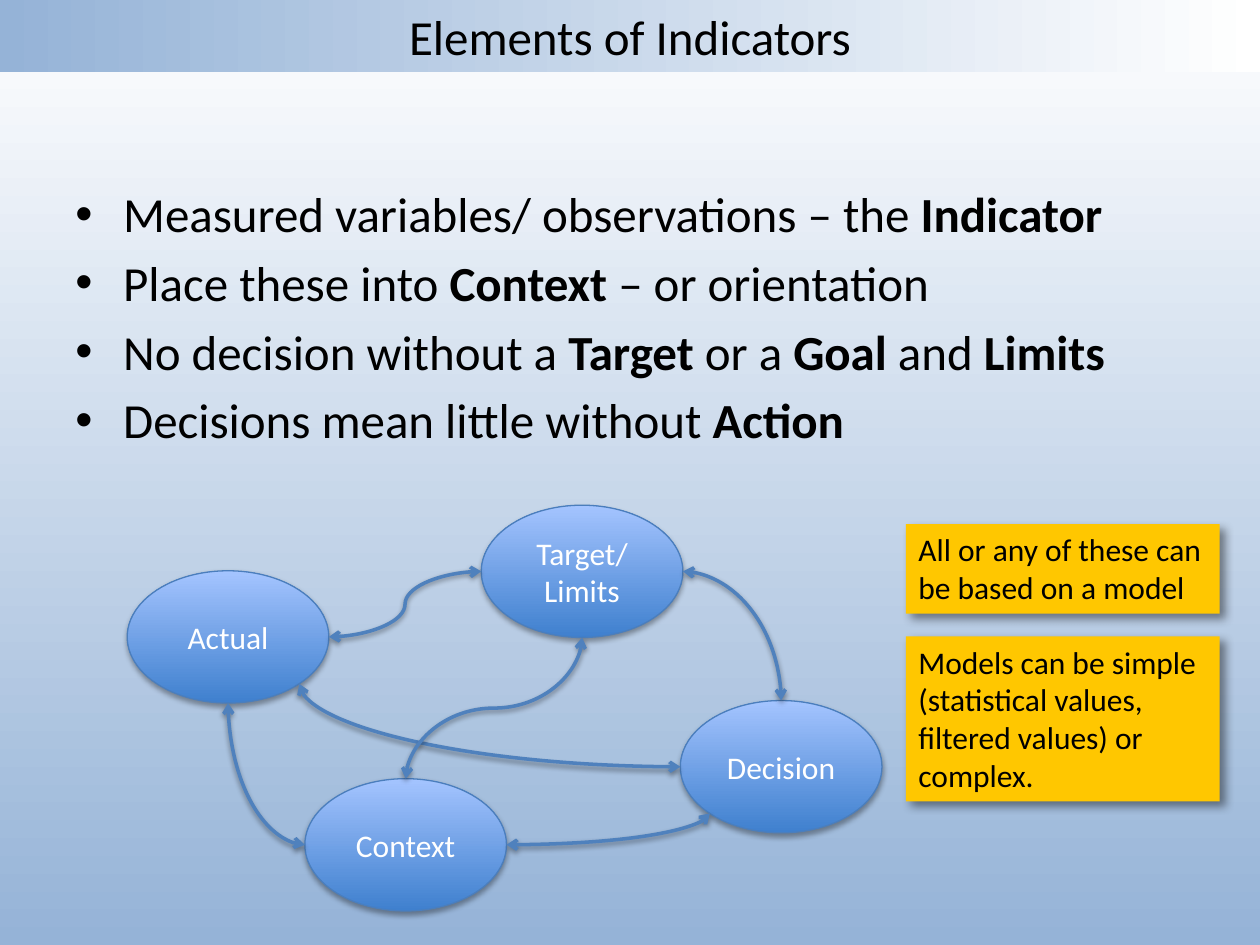
"""Build the Elements of Indicators slide with its linked decision loop."""
from dataclasses import dataclass
from math import cos, radians, sin

from pptx import Presentation
from pptx.dml.color import RGBColor as Rgb
from pptx.enum.shapes import MSO_CONNECTOR as Link, MSO_SHAPE as Form
from pptx.enum.text import MSO_ANCHOR as Anchor, MSO_AUTO_SIZE as Auto, PP_ALIGN as Align
from pptx.oxml import parse_xml
from pptx.oxml.ns import qn
from pptx.util import Inches as Inch, Pt

TITLE = "Elements of Indicators"
POINTS = [
    "Measured variables/ observations – the *Indicator*",
    "Place these into *Context* – or orientation",
    "No decision without a *Target *or a *Goal *and* Limits*",
    "Decisions mean little without *Action*",
]
NODES = {
    "Actual": (1.01, 4.53),
    "Context": (2.42, 6.18),
    "Target/ Limits": (3.82, 4.01),
    "Decision": (5.4, 5.56),
}
TOP, LEFT, LOW_LEFT, LOW, LOW_RIGHT, RIGHT = 0, 2, 3, 4, 5, 6
LINKS = [
    ("Actual", RIGHT, "Target/ Limits", LEFT),
    ("Actual", LOW, "Context", LEFT),
    ("Actual", LOW_RIGHT, "Decision", LEFT),
    ("Target/ Limits", LOW, "Context", TOP),
    ("Decision", TOP, "Target/ Limits", RIGHT),
    ("Context", RIGHT, "Decision", LOW_LEFT),
]
NOTES = [
    ("All or any of these can be based on a model", 4.16, 0.71),
    ("Models can be simple (statistical values, filtered values) or complex.", 5.05, 1.31),
]
WIDE, HIGH = 10, 7.5
NODE_W, NODE_H = 1.6, 1.05
NOTE_X, NOTE_W = 7.19, 2.49
DRAWING = "http://schemas.openxmlformats.org/drawingml/2006/main"


@dataclass(frozen=True)
class Theme:
    font: str = "Calibri"
    big: int = 28
    small: int = 18
    ink: str = "000000"
    white: str = "FFFFFF"
    sky: str = "95B3D7"
    deep: str = "3F80CE"
    pale: str = "A4C4FF"
    rim: str = "4B7EBC"
    wire: str = "4F81BD"
    gold: str = "FFC700"
    node_shade: tuple = (35, 3.1, 1.8, 90)
    wire_shade: tuple = (38, 3.1, 1.6, 90)
    note_shade: tuple = (43, 5.5, 4, 45)


LOOK = Theme()


def tint(name):
    return Rgb.from_string(name)


def blend(fill, first, last, angle):
    fill.gradient()
    fill.gradient_angle = -angle % 360
    for stop, name in zip(fill.gradient_stops, (first, last)):
        stop.color.rgb = tint(name)


def shade(shape, alpha, blur, gap, angle):
    shape._element.spPr.append(parse_xml(
        f'<a:effectLst xmlns:a="{DRAWING}"><a:outerShdw blurRad="{Pt(blur)}" '
        f'dist="{Pt(gap)}" dir="{angle * 60000}" rotWithShape="0">'
        f'<a:srgbClr val="{LOOK.ink}"><a:alpha val="{alpha * 1000}"/></a:srgbClr>'
        f'</a:outerShdw></a:effectLst>'))


def write(par, text, size, color):
    for i, part in enumerate(text.split("*")):
        if part:
            run = par.add_run()
            run.text = part
            run.font.name, run.font.size = LOOK.font, Pt(size)
            run.font.bold = i % 2 == 1
            run.font.color.rgb = tint(color)


def add_title(slide):
    title = slide.shapes.title
    title.left, title.top, title.width, title.height = 0, 0, Inch(WIDE), Inch(0.57)
    blend(title.fill, LOOK.sky, LOOK.white, 0)
    title.text_frame.vertical_anchor = Anchor.MIDDLE
    par = title.text_frame.paragraphs[0]
    par.alignment = Align.CENTER
    write(par, TITLE, LOOK.big, LOOK.ink)


def add_points(slide):
    frame = slide.shapes.add_textbox(Inch(0.5), Inch(1.41), Inch(9), Inch(5.29)).text_frame
    frame.word_wrap = True
    for i, text in enumerate(POINTS):
        par = frame.add_paragraph() if i else frame.paragraphs[0]
        par.space_before = Pt(LOOK.big * 0.2)
        props = par._p.get_or_add_pPr()
        props.set("marL", str(Inch(0.38)))
        props.set("indent", str(Inch(-0.38)))
        props.append(parse_xml(f'<a:buFont xmlns:a="{DRAWING}" typeface="Arial"/>'))
        props.append(parse_xml(f'<a:buChar xmlns:a="{DRAWING}" char="•"/>'))
        write(par, text, LOOK.big, LOOK.ink)


def add_node(slide, name, x, y):
    node = slide.shapes.add_shape(Form.OVAL, Inch(x), Inch(y), Inch(NODE_W), Inch(NODE_H))
    blend(node.fill, LOOK.deep, LOOK.pale, 270)
    node.line.color.rgb, node.line.width = tint(LOOK.rim), Pt(0.75)
    shade(node, *LOOK.node_shade)
    frame = node.text_frame
    frame.word_wrap, frame.vertical_anchor = True, Anchor.MIDDLE
    frame.paragraphs[0].alignment = Align.CENTER
    write(frame.paragraphs[0], name, LOOK.small, LOOK.white)
    return node


def site_at(name, site):
    x, y = NODES[name]
    turn = radians(90 + 45 * site)
    return x + NODE_W / 2 * (1 + cos(turn)), y + NODE_H / 2 * (1 - sin(turn))


def add_link(slide, nodes, start, out, end, into):
    (x1, y1), (x2, y2) = site_at(start, out), site_at(end, into)
    dx, dy = x2 - x1, y2 - y1
    wide, high, turn, flip = abs(dx), abs(dy), 0, dy < 0
    if out not in (LEFT, RIGHT):
        wide, high = high, wide
        turn, flip = (90, dx > 0) if dy > 0 else (270, dx < 0)
    x, y = (x1 + x2 - wide) / 2, (y1 + y2 - high) / 2
    link = slide.shapes.add_connector(
        Link.CURVE, Inch(x), Inch(y), Inch(x + wide), Inch(y + high))
    link.line.color.rgb, link.line.width = tint(LOOK.wire), Pt(2)
    props = link._element.spPr
    frame = props.find(qn("a:xfrm"))
    frame.set("rot", str(turn * 60000))
    frame.set("flipV", str(int(flip)))
    bends = 3 if (into - out) % 8 == 4 else 2
    props.find(qn("a:prstGeom")).set("prst", f"curvedConnector{bends}")
    for tip in ("headEnd", "tailEnd"):
        props.find(qn("a:ln")).append(
            parse_xml(f'<a:{tip} xmlns:a="{DRAWING}" type="arrow"/>'))
    shade(link, *LOOK.wire_shade)
    joints = link._element.find(qn("p:nvCxnSpPr")).find(qn("p:cNvCxnSpPr"))
    for tag, name, site in (("stCxn", start, out), ("endCxn", end, into)):
        joints.append(parse_xml(
            f'<a:{tag} xmlns:a="{DRAWING}" id="{nodes[name].shape_id}" idx="{site}"/>'))


def add_note(slide, text, y, high):
    note = slide.shapes.add_textbox(Inch(NOTE_X), Inch(y), Inch(NOTE_W), Inch(high))
    note.fill.solid()
    note.fill.fore_color.rgb = tint(LOOK.gold)
    shade(note, *LOOK.note_shade)
    frame = note.text_frame
    frame.word_wrap, frame.auto_size = True, Auto.SHAPE_TO_FIT_TEXT
    write(frame.paragraphs[0], text, LOOK.small, LOOK.ink)


def main():
    deck = Presentation()
    deck.slide_width, deck.slide_height = Inch(WIDE), Inch(HIGH)
    slide = deck.slides.add_slide(deck.slide_layouts.get_by_name("Title Only"))
    blend(slide.background.fill, LOOK.white, LOOK.sky, 90)
    add_title(slide)
    add_points(slide)
    nodes = {name: add_node(slide, name, *spot) for name, spot in NODES.items()}
    for link in LINKS:
        add_link(slide, nodes, *link)
    for note in NOTES:
        add_note(slide, *note)
    deck.save("out.pptx")


if __name__ == "__main__":
    main()
